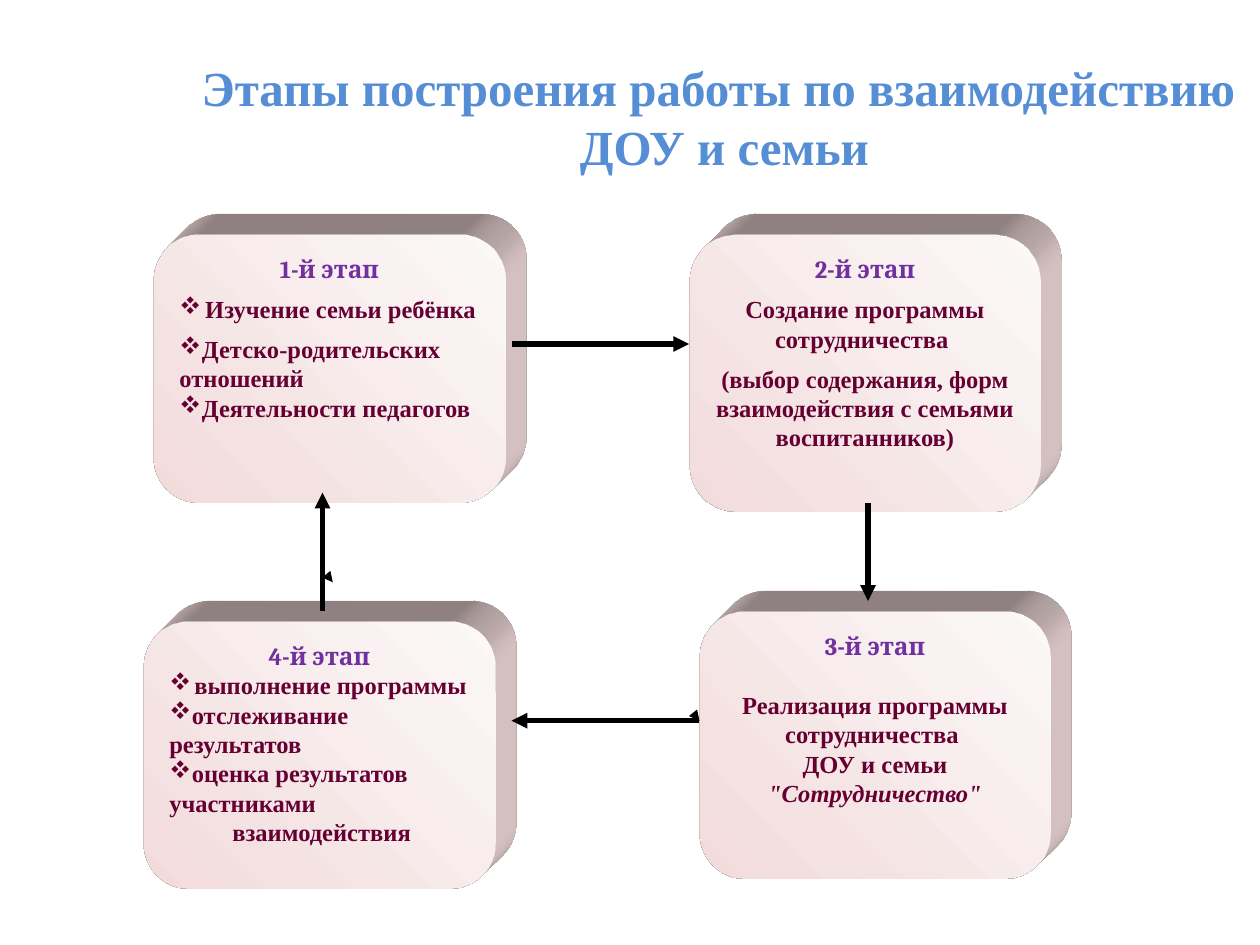
"""Builds a slide with the four-stage cycle of cooperation between kindergarten and family."""
from lxml import etree
from pptx import Presentation
from pptx.dml.color import RGBColor
from pptx.enum.shapes import MSO_CONNECTOR, MSO_SHAPE
from pptx.enum.text import MSO_ANCHOR, PP_ALIGN
from pptx.oxml.ns import qn
from pptx.util import Inches, Pt

CENTER, LEFT = PP_ALIGN.CENTER, PP_ALIGN.LEFT
MIDDLE, TOP = MSO_ANCHOR.MIDDLE, MSO_ANCHOR.TOP
ROUNDED, STRAIGHT = MSO_SHAPE.ROUNDED_RECTANGLE, MSO_CONNECTOR.STRAIGHT

THEME = {
    "title": ("Times New Roman", 28, "558ED5"),
    "heading": ("Cambria", 14, "7030A0"),
    "body": ("Times New Roman", 14, "660033"),
    "face": ("F2DBDB", "FCF8F8"),
    "side": "F2DBDB",
    "arrow": "000000",
}
CARD_WIDTH, CORNER, DEPTH = 2.79, 0.17, 0.47
SHORTEST = Pt(0.12)

TITLE = "Этапы построения работы по взаимодействию \vДОУ и семьи"
PLAIN, BULLET, BULLET_CENTER, INDENT = range(4)
STAGES = [
    {"heading": "2-й этап", "place": (5.47, 1.86, 2.2), "gaps": (6, 6, 0), "lines": [
        ("Создание программы сотрудничества ", PLAIN),
        ("(выбор содержания, форм взаимодействия с семьями воспитанников)", PLAIN)]},
    {"heading": "3-й этап", "place": (5.55, 4.85, 2.12), "gaps": (17, 0, 0), "lines": [
        ("Реализация программы сотрудничества ", PLAIN),
        ("ДОУ и семьи ", PLAIN)], "motto": "\"Сотрудничество\""},
    {"heading": "1-й этап", "place": (1.22, 1.86, 2.13), "gaps": (6, 6, 0, 0), "lines": [
        ("Изучение семьи ребёнка", BULLET_CENTER),
        ("Детско-родительских отношений", BULLET),
        ("Деятельности педагогов", BULLET)]},
    {"heading": "4-й этап", "place": (1.14, 4.93, 2.12), "gaps": (0, 0, 0, 0, 0), "lines": [
        ("выполнение программы", BULLET_CENTER),
        ("отслеживание результатов", BULLET),
        ("оценка результатов участниками", BULLET),
        ("взаимодействия", INDENT)]},
]
ARROWS = [
    ((4.06, 2.73), (5.47, 2.73), 3),
    ((6.89, 3.99), (6.89, 4.77), 3),
    ((5.55, 5.72), (5.55, 5.72), 0.75),
    ((5.55, 5.72), (4.06, 5.72), 3),
    ((2.64, 4.62), (2.64, 4.62), 0.75),
    ((2.56, 4.85), (2.56, 3.91), 3),
]


def style(paragraph, role):
    name, size, color = THEME[role]
    for run in paragraph.runs:
        run.font.name, run.font.size, run.font.bold = name, Pt(size), True
        run.font.color.rgb = RGBColor.from_string(color)


def paint(card):
    card.shadow.inherit = False
    card.line.fill.background()
    card.fill.gradient()
    card.fill.gradient_angle = 45
    for stop, color, position in zip(card.fill.gradient_stops, THEME["face"], (0, 1)):
        stop.color.rgb = RGBColor.from_string(color)
        stop.position = position


def extrude(card):
    properties = card._element.spPr
    scene = etree.SubElement(properties, qn("a:scene3d"))
    etree.SubElement(scene, qn("a:camera"), prst="legacyObliqueTopRight")
    etree.SubElement(scene, qn("a:lightRig"), rig="legacyFlat3", dir="b")
    solid = etree.SubElement(properties, qn("a:sp3d"), extrusionH=str(Inches(DEPTH)),
                             prstMaterial="legacyMatte")
    for bevel in ("a:bevelT", "a:bevelB"):
        etree.SubElement(solid, qn(bevel), w="13500", h="13500", prst="angle")
    color = etree.SubElement(solid, qn("a:extrusionClr"))
    etree.SubElement(color, qn("a:srgbClr"), val=THEME["side"])


def add_bullet(paragraph):
    properties = paragraph._p.get_or_add_pPr()
    color = etree.SubElement(properties, qn("a:buClr"))
    etree.SubElement(color, qn("a:srgbClr"), val=THEME["body"][2])
    etree.SubElement(properties, qn("a:buFont"), typeface="Wingdings",
                     pitchFamily="2", charset="2")
    etree.SubElement(properties, qn("a:buChar"), char="v")


def add_card(shapes, stage):
    left, top, height = stage["place"]
    card = shapes.add_shape(ROUNDED, Inches(left), Inches(top), Inches(CARD_WIDTH), Inches(height))
    card.adjustments[0] = CORNER
    paint(card)
    extrude(card)
    frame = card.text_frame
    frame.word_wrap, frame.vertical_anchor = True, TOP
    lines = [(stage["heading"], PLAIN)] + stage["lines"]
    for index, ((words, kind), gap) in enumerate(zip(lines, stage["gaps"])):
        paragraph = frame.paragraphs[0] if index == 0 else frame.add_paragraph()
        paragraph.text = words
        paragraph.alignment = LEFT if kind in (BULLET, INDENT) else CENTER
        paragraph.space_after = Pt(gap)
        if kind in (BULLET, BULLET_CENTER):
            add_bullet(paragraph)
        if kind == INDENT:
            paragraph._p.get_or_add_pPr().set("marL", str(Inches(0.5)))
        style(paragraph, "body" if index else "heading")
    if "motto" in stage:
        motto = paragraph.add_run()
        motto.text = stage["motto"]
        style(paragraph, "body")
        motto.font.italic = True


def add_arrow(shapes, start, end, width):
    tip = [Inches(part) + (SHORTEST if start == end else 0) for part in end]
    arrow = shapes.add_connector(STRAIGHT, *map(Inches, start), *tip)
    arrow.line.width = Pt(width)
    arrow.line.color.rgb = RGBColor.from_string(THEME["arrow"])
    etree.SubElement(arrow.line._get_or_add_ln(), qn("a:tailEnd"), type="triangle")
    etree.SubElement(arrow._element.spPr, qn("a:effectLst"))


def main():
    deck = Presentation()
    deck.slide_width, deck.slide_height = Inches(10), Inches(7.5)
    shapes = deck.slides.add_slide(deck.slide_layouts[6]).shapes

    title = shapes.add_textbox(Inches(1.5), Inches(0.3), Inches(8.5), Inches(1.25)).text_frame
    title.word_wrap, title.vertical_anchor = True, MIDDLE
    title.text = TITLE
    title.paragraphs[0].alignment = CENTER
    style(title.paragraphs[0], "title")

    for stage in STAGES:
        add_card(shapes, stage)
    for start, end, width in ARROWS:
        add_arrow(shapes, start, end, width)
    deck.save("out.pptx")


if __name__ == "__main__":
    main()
